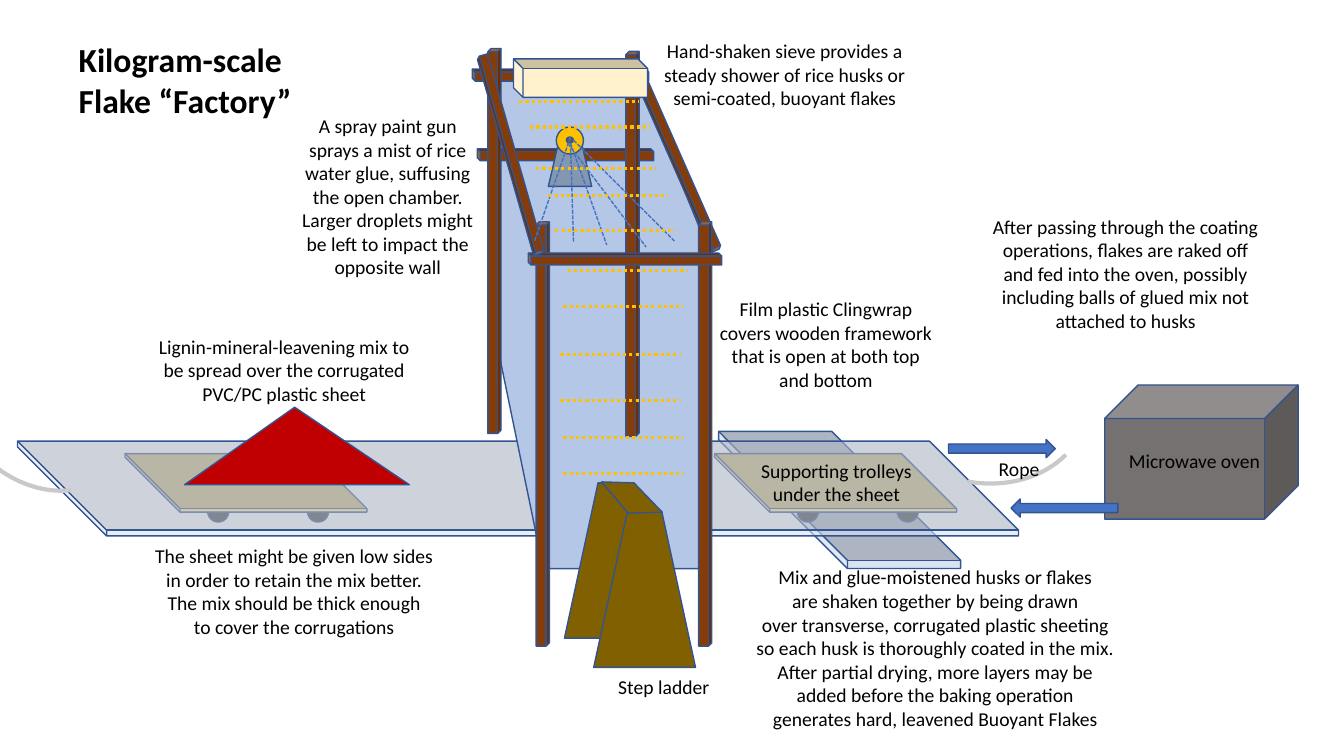
"""Build the slide of the kilogram-scale flake factory."""
from lxml import etree
from pptx import Presentation
from pptx.dml.color import RGBColor
from pptx.enum.dml import MSO_LINE
from pptx.enum.shapes import MSO_CONNECTOR, MSO_SHAPE
from pptx.enum.text import MSO_ANCHOR, MSO_AUTO_SIZE, PP_ALIGN
from pptx.oxml.ns import qn
from pptx.util import Pt

CUBE, DISC, CONE = MSO_SHAPE.CUBE, MSO_SHAPE.OVAL, MSO_SHAPE.TRAPEZOID
PILE, ARROW, ARC = MSO_SHAPE.ISOSCELES_TRIANGLE, MSO_SHAPE.RIGHT_ARROW, MSO_SHAPE.ARC
FREE = None
DASH, DOT = MSO_LINE.SQUARE_DOT, MSO_LINE.ROUND_DOT
LEFT, MID = PP_ALIGN.LEFT, PP_ALIGN.CENTER
TOP, FIXED = MSO_ANCHOR.TOP, MSO_AUTO_SIZE.NONE
STRAIGHT = MSO_CONNECTOR.STRAIGHT

HUES = {
    "text": "000000", "edge": "325491", "wheel": "404040", "deck": "FFE699",
    "sheet": "DAE3F3", "film": "B4C7E7", "wood": "843C0B", "nozzle": "8497B0",
    "gold": "FFC000", "hub": "595959", "mix": "C00000", "ladder": "806000",
    "sieve": "FFF2CC", "oven": "767171", "blue": "4472C4", "rope": "C9C9C9",
}
HUES = {name: RGBColor.from_string(code) for name, code in HUES.items()}


def say(text, frame, size=14, bold=False, align=MID):
    """Fill a text frame with formatted lines."""
    frame.text = text
    frame.word_wrap = False
    frame.auto_size = FIXED
    frame.vertical_anchor = TOP
    for para in frame.paragraphs:
        para.alignment = align
        font = para.runs[0].font
        font.name, font.size, font.bold = "Calibri", Pt(size), bold
        font.color.rgb = HUES["text"]


deck = Presentation()
deck.slide_width, deck.slide_height = Pt(960), Pt(540)
slide = deck.slides.add_slide(deck.slide_layouts[5])
shapes = slide.shapes

title = shapes.title
title.left, title.top, title.width, title.height = Pt(49), Pt(24.5), Pt(167), Pt(65.5)
say("Kilogram-scale\nFlake “Factory”", title.text_frame, size=24, bold=True, align=LEFT)

carts = [[
    (DISC, (148.3 + shift, 357.8, 15.1, 15.1), "wheel", 0, None),
    (DISC, (219.6 + shift, 357.8, 15.1, 15.1), "wheel", 0, None),
    (CUBE, (154.8 + shift, 258.5, 41.8, 172.8), "deck", 270, 0.94),
] for shift in (0, 421.2)]

beams = [(CUBE, box, "wood", turn, None) for box, turn in (
    ((399.6, 47.5, 8.6, 126), 270),
    ((396, -9.4, 8.6, 126), 270),
    ((348.5, 34.6, 9.4, 275), 0),
    ((383, 158.4, 9.4, 303.1), 0),
    ((478.1, 37.4, 7.9, 147.6), 156.2),
    ((447.1, 36.7, 9.4, 275), 0),
    ((499, 158.4, 9.4, 303.1), 0),
    ((442.1, 115.9, 8.6, 138.2), 270),
    ((360.7, 36.7, 7.9, 147.6), 164),
)]

film = ((503.3, 406.1), (388.1, 406.1), (354.2, 241.9),
        (355.7, 54.7), (456.5, 56.2), (504, 173.5))
step = (448.6, 366.5), (429.8, 344.2), (452.9, 344.9), (473, 365.8)

parts = [
    *carts[0],
    (CUBE, (550.8, 270.7, 97.9, 172.8), "sheet", 270, 0.94),
    *carts[1],
    (CUBE, (336.2, -8.6, 67.7, 715), "sheet", 270, 0.94),
    (FREE, film, "film", 0, None),
    *beams,
    (CONE, (391.7, 100.1, 31, 33.1), "nozzle", 0, None),
    (DISC, (397.4, 90.7, 19.4, 19.4), "gold", 0, None),
    (DISC, (404.6, 97.9, 5, 4.3), "hub", 0, None),
    (PILE, (131.8, 290.9, 160.6, 55.4), "mix", 0, 0.49),
    (CONE, (403.2, 344.9, 72.7, 110.9), "ladder", 0, 0.33),
    (CONE, (424.1, 365.8, 72.7, 110.9), "ladder", 0, 0.33),
    (FREE, step, "ladder", 0, None),
    (CUBE, (401, 7.9, 27.4, 95.8), "sieve", 270, None),
    (CUBE, (789.1, 275, 138.2, 95.8), "oven", 0, None),
    (ARROW, (677.5, 313.9, 76.3, 13), "blue", 0, None),
    (ARROW, (722.2, 356.4, 76.3, 13), "blue", 180, None),
]
for kind, place, hue, turn, bend in parts:
    if kind is FREE:
        spots = [(Pt(x), Pt(y)) for x, y in place]
        pen = shapes.build_freeform(*spots[0], scale=1.0)
        pen.add_line_segments(spots[1:], close=True)
        part = pen.convert_to_shape()
    else:
        part = shapes.add_shape(kind, *map(Pt, place))
    part.shadow.inherit = False
    part.rotation = turn
    if bend is not None:
        part.adjustments[0] = bend
    part.fill.solid()
    part.fill.fore_color.rgb = HUES[hue]
    part.line.color.rgb = HUES["edge"]
    part.line.width = Pt(1)
    if place[-1] == 715:
        tint = part.fill._xPr.find(qn("a:solidFill"))[0]
        etree.SubElement(tint, qn("a:alpha"), val="60000")

sprays = [(ends, "blue", 1, DASH) for ends in (
    (407.5, 97.9, 381.6, 172.8),
    (407.5, 102.2, 409.7, 173.5),
    (407.5, 102.2, 433.4, 175),
    (405.4, 102.2, 461.5, 176.4),
    (409.7, 100.1, 481.7, 172.1),
)]
husks = [((x, y, x + 85.7, y), "gold", 2.25, DOT) for x, y in (
    (370.8, 72.7), (378.7, 90.7), (383, 120.2), (391.7, 139.7),
    (396.7, 164.9), (405.4, 193), (402.5, 218.9), (400.3, 253.4),
    (400.3, 285.8), (402.5, 312.5), (402.5, 338.4),
)]
for ends, hue, thick, dash in sprays + husks:
    wire = shapes.add_connector(STRAIGHT, *map(Pt, ends))
    wire.line.color.rgb = HUES[hue]
    wire.line.width = Pt(thick)
    wire.line.dash_style = dash
    etree.SubElement(wire._element.spPr, qn("a:effectLst"))

for x, y, turn in ((641.5, 209.5, 100.1), (-31, 206.6, 138.7)):
    rope = shapes.add_shape(ARC, Pt(x), Pt(y), Pt(121), Pt(149.8))
    rope.shadow.inherit = False
    rope.rotation = turn
    rope.adjustments[0] = 176.47
    rope.fill.background()
    rope.line.color.rgb = HUES["rope"]
    rope.line.width = Pt(3)

notes = (
    ((534.2, 324, 126.7, 41), "Supporting trolleys\nunder the sheet"),
    ((434.2, 478.8, 79.9, 24.5), "Step ladder"),
    ((430.6, 24.5, 259.9, 58.3),
     "Hand-shaken sieve provides a\nsteady shower of rice husks or\n"
     "semi-coated, buoyant flakes"),
    ((103.7, 235.4, 198.7, 58.3),
     "Lignin-mineral-leavening mix to\nbe spread over the corrugated\n"
     "PVC/PC plastic sheet"),
    ((532, 400.3, 272.2, 126),
     "Mix and glue-moistened husks or flakes\nare shaken together by being drawn\n"
     "over transverse, corrugated plastic sheeting\n"
     "so each husk is thoroughly coated in the mix.\n"
     "After partial drying, more layers may be\nadded before the baking operation\n"
     "generates hard, leavened Buoyant Flakes"),
    ((798.5, 316.8, 109.4, 24.5), "Microwave oven"),
    ((207.9, 77.8, 138.2, 126),
     "A spray paint gun\nsprays a mist of rice\nwater glue, suffusing\n"
     "the open chamber.\nLarger droplets might\nbe left to impact the\nopposite wall"),
    ((506.5, 208.8, 167, 74.9),
     "Film plastic Clingwrap\ncovers wooden framework\n"
     "that is open at both top\nand bottom"),
    ((700.8, 149.8, 206.6, 92.2),
     "After passing through the coating\noperations, flakes are raked off\n"
     "and fed into the oven, possibly\nincluding balls of glued mix not\n"
     "attached to husks"),
    ((102.5, 385.2, 215.3, 74.9),
     "The sheet might be given low sides\nin order to retain the mix better.\n"
     "The mix should be thick enough\nto cover the corrugations"),
    ((706, 322.6, 43.9, 24.5), "Rope"),
)
for box, text in notes:
    say(text, shapes.add_textbox(*map(Pt, box)).text_frame)

deck.save("out.pptx")
